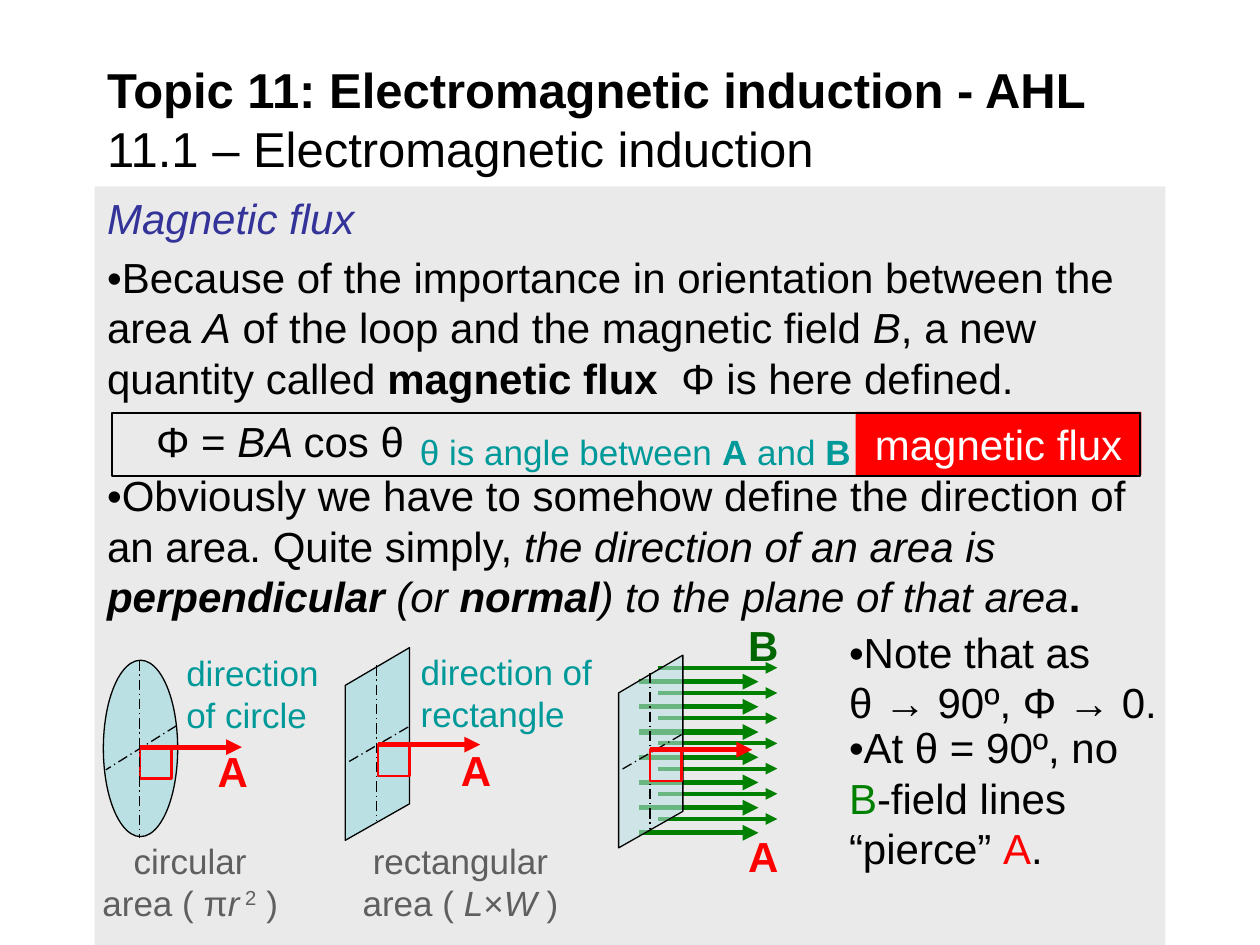
from lxml.etree import SubElement
from pptx import Presentation
from pptx.dml.color import RGBColor
from pptx.enum.dml import MSO_LINE
from pptx.enum.shapes import MSO_CONNECTOR, MSO_SHAPE
from pptx.enum.text import MSO_ANCHOR, MSO_AUTO_SIZE, PP_ALIGN
from pptx.oxml.ns import qn
from pptx.util import Inches, Pt

deck = Presentation()
deck.slide_width = Inches(10)
deck.slide_height = Inches(7.5)
column = deck.slide_width // 100
row = deck.slide_height // 75
slide = deck.slides.add_slide(deck.slide_layouts[1])
shapes = slide.shapes
tint = RGBColor.from_string
BLACK, RED, GREEN, TEAL, GREY, PALE = "000000", "FF0000", "008000", "009999", "5F5F5F", "BBE0E3"


def write(paragraph, runs, size, colour):
    for text, style, *own_colour in runs:
        if text == "\n":
            paragraph.add_line_break()
            continue
        run = paragraph.add_run()
        run.text = text
        font = run.font
        font.name, font.size = "Arial", Pt(size)
        font.bold, font.italic = "b" in style, "i" in style
        font.color.rgb = tint(own_colour[0] if own_colour else colour)
        if "^" in style:
            font._element.set("baseline", "30000")


def draw_line(x1, y1, x2, y2, colour, weight, arrow):
    line = shapes.add_connector(
        MSO_CONNECTOR.STRAIGHT, int(x1 * column), int(y1 * row), int(x2 * column), int(y2 * row))
    line.line.color.rgb = tint(colour)
    line.line.width = Pt(weight)
    if arrow:
        SubElement(line.line._get_or_add_ln(), qn("a:tailEnd"), type="triangle")
    else:
        line.line.dash_style = MSO_LINE.LONG_DASH_DOT
    SubElement(line._element.spPr, qn("a:effectLst"))


heading = shapes.title
heading.left, heading.top = int(7.5 * column), int(4.5 * row)
heading.width, heading.height = 85 * column, int(9.8 * row)
heading.text_frame.auto_size = MSO_AUTO_SIZE.NONE
heading.text_frame.vertical_anchor = MSO_ANCHOR.MIDDLE
heading.text_frame.paragraphs[0].alignment = PP_ALIGN.LEFT
write(heading.text_frame.paragraphs[0], [
    ("Topic 11: Electromagnetic induction - AHL", "b"), ("\n", ""),
    ("11.1 – Electromagnetic induction", "")], 28, BLACK)

lesson = slide.placeholders[1]
lesson.left, lesson.top = int(7.5 * column), int(14.8 * row)
lesson.width, lesson.height = 85 * column, int(60.2 * row)
lesson.fill.solid()
lesson.fill.fore_color.rgb = tint("EAEAEA")
lesson.text_frame.auto_size = MSO_AUTO_SIZE.NONE
lesson_paragraphs = [
    (0, [("Magnetic flux", "i", "333399")]),
    (4.8, [("•Because of the importance in orientation between the area ", ""), ("A", "i"),
           (" of the loop and the magnetic field ", ""), ("B", "i"),
           (", a new quantity called ", ""), ("magnetic flux ", "b"),
           (" Φ is here defined.", "")]),
    (38.4, [("•Obviously we have to somehow define the direction of an area. Quite simply, ", ""),
            ("the direction of an area is ", "i"), ("perpendicular", "bi"), (" (or ", "i"),
            ("normal", "bi"), (") to the plane of that area", "i"), (".", "b")]),
]
for number, (gap, runs) in enumerate(lesson_paragraphs):
    paragraph = lesson.text_frame.add_paragraph() if number else lesson.text_frame.paragraphs[0]
    paragraph.space_before = Pt(gap)
    properties = paragraph._p.get_or_add_pPr()
    properties.set("marL", "0")
    properties.set("indent", "0")
    SubElement(properties, qn("a:buNone"))
    write(paragraph, runs, 24, BLACK)

for level in range(7):
    far_y, near_y = 53 + 2 * level, 54.1 + 2 * level
    draw_line(52.2, far_y, 61.7, far_y, GREEN, 2.25, True)
    draw_line(50.7, near_y, 60.2, near_y, GREEN, 3, True)

for left, top, opacity in [(27.4, 51.4, 100), (49.1, 52, 57)]:
    outline = [(5.1, 0), (0, 3), (0, 15.3), (5.1, 12.4)]
    corners = [(int((left + x) * column), int((top + y) * row)) for x, y in outline]
    builder = shapes.build_freeform(*corners[0])
    builder.add_line_segments(corners[1:], close=True)
    pane = builder.convert_to_shape()
    pane.shadow.inherit = False
    pane.fill.solid()
    pane.fill.fore_color.rgb = tint(PALE)
    if opacity < 100:
        pane_colour = pane._element.spPr.find(".//" + qn("a:srgbClr"))
        SubElement(pane_colour, qn("a:alpha"), val=str(opacity * 1000))
    pane.line.color.rgb = tint(BLACK)
    pane.line.width = Pt(0.75)
    draw_line(left + 2.5, top + 1.4, left + 2.5, top + 13.8, BLACK, 0.75, False)
    draw_line(left + 5, top + 6.3, left + 0.2, top + 9.1, BLACK, 0.75, False)

normals = [(11.1, 59.3), (30, 59.1), (51.6, 59.5)]
outlined_parts = [
    (MSO_SHAPE.RECTANGLE, 67.9, 32.7, 22.7, 5, RED, None, 0),
    (MSO_SHAPE.RECTANGLE, 8.9, 32.8, 81.6, 5, None, BLACK, 1),
    (MSO_SHAPE.OVAL, 8.2, 52.4, 5.9, 14, PALE, BLACK, 0.75),
] + [(MSO_SHAPE.RECTANGLE, x, y, 2.5, 2.5, None, RED, 1.5) for x, y in normals]
for preset, left, top, width, height, fill, edge, weight in outlined_parts:
    part = shapes.add_shape(
        preset, int(left * column), int(top * row), int(width * column), int(height * row))
    part.shadow.inherit = False
    if fill:
        part.fill.solid()
        part.fill.fore_color.rgb = tint(fill)
    else:
        part.fill.background()
    if edge:
        part.line.color.rgb = tint(edge)
        part.line.width = Pt(weight)
    else:
        part.line.fill.background()
    if fill == RED:
        part.text_frame.paragraphs[0].alignment = PP_ALIGN.CENTER
        write(part.text_frame.paragraphs[0], [("magnetic flux", "")], 24, "FFFFFF")

draw_line(11.1, 52.4, 11.1, 66.5, BLACK, 0.75, False)
draw_line(14, 57.6, 8.4, 61.1, BLACK, 0.75, False)
for x, y in normals:
    draw_line(x, y, x + 8.1, y, RED, 3, True)

LEFT, CENTER, RIGHT = PP_ALIGN.LEFT, PP_ALIGN.CENTER, PP_ALIGN.RIGHT
captions = [
    (11.4, 32.5, 34.1, 5, LEFT, 24, BLACK, [("Φ = ", ""), ("BA ", "i"), ("cos θ", "")]),
    (31.7, 33.7, 36.8, 4.3, RIGHT, 20, TEAL,
     [("θ is angle between ", ""), ("A", "b"), (" and ", ""), ("B", "b")]),
    (7.1, 66.1, 16, 7.7, CENTER, 20, GREY,
     [("circular area ( π", ""), ("r", "i"), (" 2", "^"), (" )", "")]),
    (26.9, 66.1, 19.3, 7.7, CENTER, 20, GREY,
     [("rectangular area ( ", ""), ("L", "i"), ("×", ""), ("W", "i"), (" )", "")]),
    (13.8, 51.2, 13.1, 7.7, LEFT, 20, TEAL, [("direction of circle", "")]),
    (32.4, 51.1, 15.7, 7.7, LEFT, 20, TEAL, [("direction of rectangle", "")]),
    (58.4, 48.7, 4.4, 5, LEFT, 24, "006600", [("B", "b")]),
    (16.3, 58.7, 4.4, 5, LEFT, 24, RED, [("A", "b")]),
    (35.6, 58.6, 4.4, 5, LEFT, 24, RED, [("A", "b")]),
    (58.4, 65.4, 4.4, 5, LEFT, 24, RED, [("A", "b")]),
    (66.4, 49.2, 26.6, 9, LEFT, 24, BLACK,
     [("•Note that as", ""), ("\n", ""), ("θ → 90º, Φ → 0.", "")]),
    (66.4, 56.8, 26.6, 13, LEFT, 24, BLACK,
     [("•At θ = 90º, no ", ""), ("B", "", GREEN), ("-field lines “pierce” ", ""),
      ("A", "", RED), (".", "")]),
]
for left, top, width, height, alignment, size, colour, runs in captions:
    caption = shapes.add_textbox(
        int(left * column), int(top * row), int(width * column), int(height * row))
    caption.text_frame.word_wrap = True
    caption.text_frame.paragraphs[0].alignment = alignment
    write(caption.text_frame.paragraphs[0], runs, size, colour)

deck.save("out.pptx")
